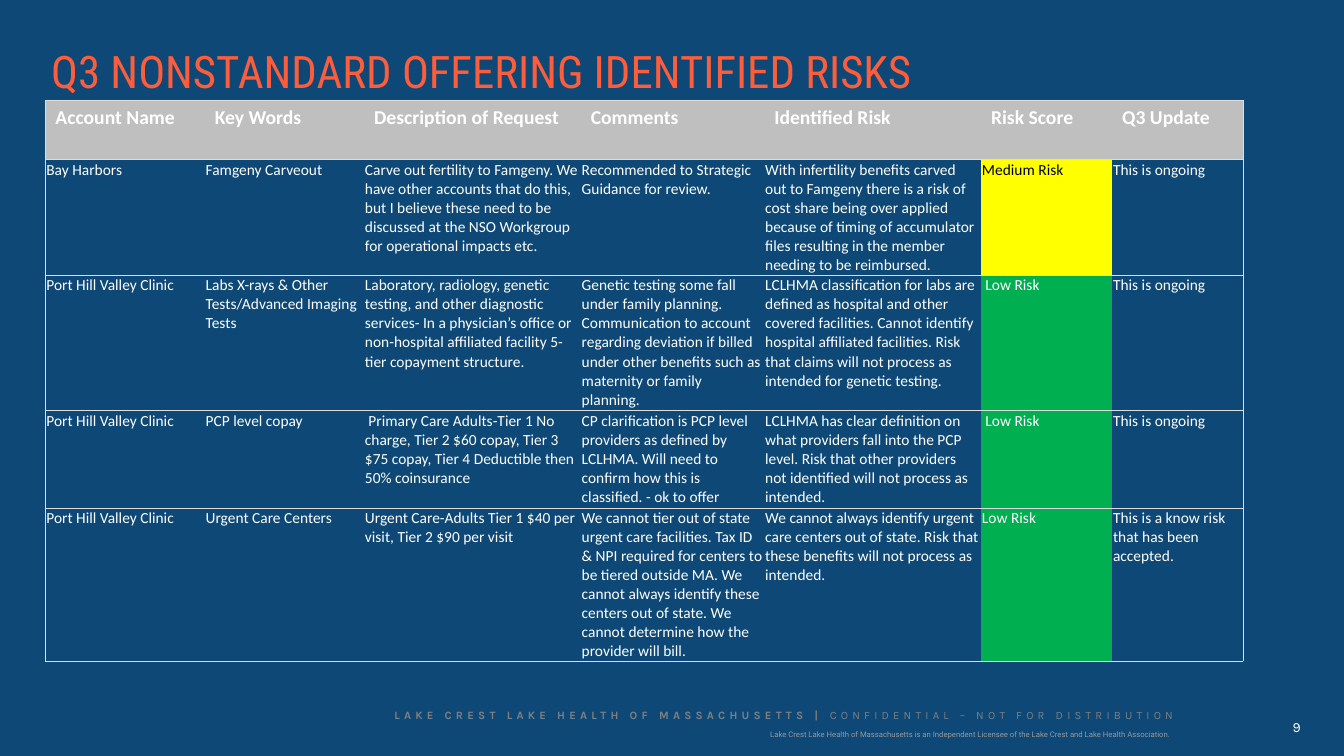
import pptx
import pptx.dml.color
import pptx.enum.text
import pptx.oxml
import pptx.oxml.ns
import pptx.util
from pptx.util import Inches

WHITE = "FFFFFF"
GRID = "DDDDDD"
RIGHT = pptx.enum.text.PP_ALIGN.RIGHT
WIDTHS = [1.58, 1.58, 2.15, 1.82, 2.15, 1.3, 1.3]
HEIGHTS = [0.58, 1.15, 1.34, 0.97, 1.52]
RISK_COLUMN = 5
RISK_COLORS = {"Medium Risk": ("FFFF00", "000000"), "Low Risk": ("00B050", WHITE)}
HEADERS = ["Account Name", "Key Words", "Description of Request", "Comments",
           "Identified Risk", "Risk Score", "Q3 Update"]
RISKS = [
    ["Bay Harbors", "Famgeny Carveout",
     "Carve out fertility to Famgeny. We have other accounts that do this, but I believe "
     "these need to be discussed at the NSO Workgroup for operational impacts etc.",
     "Recommended to Strategic Guidance for review.",
     "With infertility benefits carved out to Famgeny there is a risk of cost share being "
     "over applied because of timing of accumulator files resulting in the member needing "
     "to be reimbursed.",
     "Medium Risk", "This is ongoing"],
    ["Port Hill Valley Clinic", "Labs X-rays & Other Tests/Advanced Imaging Tests",
     "Laboratory, radiology, genetic testing, and other diagnostic services- In a "
     "physician’s office or non-hospital affiliated facility 5-tier copayment structure.",
     "Genetic testing some fall under family planning. Communication to account regarding "
     "deviation if billed under other benefits such as maternity or family planning.",
     "LCLHMA classification for labs are defined as hospital and other covered facilities. "
     "Cannot identify hospital affiliated facilities. Risk that claims will not process as "
     "intended for genetic testing.",
     " Low Risk", "This is ongoing"],
    ["Port Hill Valley Clinic", "PCP level copay",
     " Primary Care Adults-Tier 1 No charge, Tier 2 $60 copay, Tier 3 $75 copay, Tier 4 "
     "Deductible then 50% coinsurance",
     "CP clarification is PCP level providers as defined by LCLHMA. Will need to confirm "
     "how this is classified. - ok to offer",
     "LCLHMA has clear definition on what providers fall into the PCP level. Risk that "
     "other providers not identified will not process as intended.",
     " Low Risk", "This is ongoing"],
    ["Port Hill Valley Clinic", "Urgent Care Centers",
     "Urgent Care-Adults Tier 1 $40 per visit, Tier 2 $90 per visit",
     "We cannot tier out of state urgent care facilities. Tax ID & NPI required for centers "
     "to be tiered outside MA. We cannot always identify these centers out of state. We "
     "cannot determine how the provider will bill.",
     "We cannot always identify urgent care centers out of state. Risk that these benefits "
     "will not process as intended.",
     "Low Risk", "This is a know risk that has been accepted."],
]


def rgb(value):
    """Return the colour for a hex string."""
    return pptx.dml.color.RGBColor.from_string(value)


def set_font(font, name, size, color, bold=False):
    """Set the face, size, colour and weight of a font."""
    font.name = name
    font.size = pptx.util.Pt(size)
    font.bold = bold
    font.color.rgb = rgb(color)


def add_text(s, box, runs, name, size, color, align=None, inset=0, spacing=None):
    """Add a one-paragraph text box from (text, bold) runs."""
    tf = s.shapes.add_textbox(*[Inches(v) for v in box]).text_frame
    tf.word_wrap = True
    tf.margin_left = tf.margin_right = Inches(inset)
    tf.margin_top = tf.margin_bottom = Inches(inset / 2)
    p = tf.paragraphs[0]
    p.alignment = align
    set_font(p.font, name, size, color)
    for text, bold in runs:
        r = p.add_run()
        r.text = text
        r.font.bold = bold
        if spacing:
            r.font._element.set("spc", str(spacing * 100))
    return p


def set_borders(cell, sides):
    """Draw thin lines on the given sides of a cell and clear the others."""
    tc_pr = cell._tc.get_or_add_tcPr()
    for i, side in enumerate("LRTB"):
        paint = (f'<a:solidFill><a:srgbClr val="{GRID}"/></a:solidFill>'
                 if side in sides else "<a:noFill/>")
        tc_pr.insert(i, pptx.oxml.parse_xml(
            f'<a:ln{side} {pptx.oxml.ns.nsdecls("a")} w="6350">{paint}</a:ln{side}>'))


def fill_cell(cell, text, size, color, fill=None, bold=False):
    """Write a cell's text and set its font and fill."""
    cell.text = text
    set_font(cell.text_frame.paragraphs[0].font, "Calibri", size, color, bold)
    if fill:
        cell.fill.solid()
        cell.fill.fore_color.rgb = rgb(fill)
    else:
        cell.fill.background()


def add_risk_table(s):
    """Add the table of identified risks."""
    table = s.shapes.add_table(len(HEIGHTS), len(WIDTHS), Inches(0.45), Inches(1),
                               Inches(sum(WIDTHS)), Inches(sum(HEIGHTS))).table
    for column, width in zip(table.columns, WIDTHS):
        column.width = Inches(width)
    for i, row in enumerate([HEADERS] + RISKS):
        table.rows[i].height = Inches(HEIGHTS[i])
        for j, text in enumerate(row):
            cell = table.cell(i, j)
            outer = {0: "L", len(HEADERS) - 1: "R"}.get(j, "")
            set_borders(cell, "TB" + outer)
            if i == 0:
                fill_cell(cell, text, 14, WHITE, "BFBFBF", True)
                continue
            cell.margin_left = cell.margin_right = cell.margin_top = Inches(0.01)
            cell.margin_bottom = 0
            fill, color = RISK_COLORS[text.strip()] if j == RISK_COLUMN else (None, WHITE)
            fill_cell(cell, text, 11, color, fill)


def add_footer(s):
    """Add the confidentiality line, the licence line and the page number."""
    add_text(s, (3.64, 7.03, 8, 0.13),
             [("LAKE CREST LAKE HEALTH OF MASSACHUSETTS |", True),
              (" CONFIDENTIAL – NOT FOR DISTRIBUTION", False)],
             "Karla", 8, "808080", RIGHT, spacing=3)
    add_text(s, (5.86, 7.24, 5.75, 0.09),
             [("Lake Crest Lake Health of Massachusetts is an Independent Licensee of the "
               "Lake Crest and Lake Health Association.", False)],
             "Roboto", 5.5, "999999", RIGHT)
    add_text(s, (12.47, 7.08, 0.53, 0.27), [("9", False)],
             "Karla", 10, WHITE, RIGHT, inset=0.1, spacing=3)


def main():
    """Build the slide and save it."""
    prs = pptx.Presentation()
    prs.slide_width = Inches(13.33)
    prs.slide_height = Inches(7.5)
    s = prs.slides.add_slide(prs.slide_layouts[6])
    s.background.fill.solid()
    s.background.fill.fore_color.rgb = rgb("0D4877")
    title = add_text(s, (0.41, 0.44, 9.67, 0.38),
                     [("Q3 NONSTANDARD OFFERING IDENTIFIED RISKS", False)],
                     "Roboto Condensed", 32, "FD5D3B", inset=0.1)
    title.line_spacing = 0.9
    add_risk_table(s)
    add_footer(s)
    prs.save("out.pptx")


if __name__ == "__main__":
    main()
